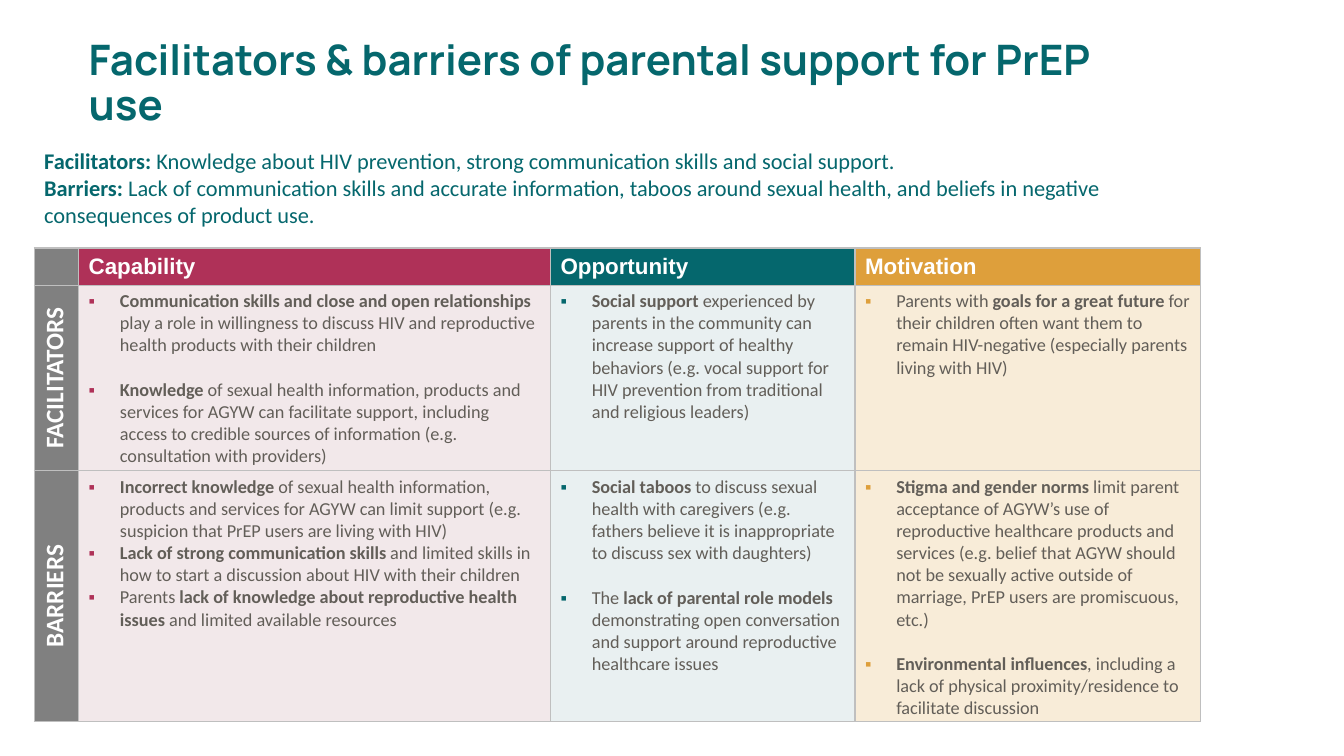
from dataclasses import dataclass

from lxml.etree import SubElement
from pptx import Presentation
from pptx.dml.color import RGBColor
from pptx.enum.text import MSO_ANCHOR as Anchor, MSO_AUTO_SIZE as AutoSize, PP_ALIGN as Align
from pptx.oxml.ns import qn
from pptx.util import Pt

PX = 9144
COLORS = {
    "teal": "05676D", "berry": "AF3158", "gold": "DE9F3B",
    "pale_teal": "E9F0F1", "pale_berry": "F2E8EA", "pale_gold": "F8ECD8",
    "gray": "808080", "border": "BFBFBF", "body": "625E58", "white": "FFFFFF",
}
ROW_LABELS = ["FACILITATORS", "BARRIERS"]
LABEL_WIDTH = 44
ROW_HEIGHTS = [37, 183, 249]
BULLET_INDENT = 31
BULLET_GAP = 15.9


@dataclass
class Items:
    texts: list[str]
    gap: float = BULLET_GAP


@dataclass
class Column:
    heading: str
    width: int
    color: str
    tint: str
    rows: list[Items]


COLUMNS = [
    Column("Capability", 468, "berry", "pale_berry", [
        Items([
            "**Communication skills and close and open relationships **play a role in willingness "
            "to discuss HIV and reproductive health products with their children",
            "**Knowledge **of sexual health information, products and services for AGYW can "
            "facilitate support, including access to credible sources of information "
            "(e.g. consultation with providers)",
        ]),
        Items([
            "**Incorrect knowledge **of sexual health information, products and services for AGYW "
            "can limit support (e.g. suspicion that PrEP users are living with HIV)",
            "**Lack of strong communication skills **and limited skills in how to start a "
            "discussion about HIV with their children",
            "Parents **lack of knowledge about reproductive health issues **and limited "
            "available resources",
        ], gap=0),
    ]),
    Column("Opportunity", 302, "teal", "pale_teal", [
        Items([
            "**Social support **experienced by parents in the community can increase support of "
            "healthy behaviors (e.g. vocal support for HIV prevention from traditional and "
            "religious leaders)",
        ]),
        Items([
            "**Social taboos **to discuss sexual health with caregivers (e.g. fathers believe it "
            "is inappropriate to discuss sex with daughters)",
            "The **lack of parental role models **demonstrating open conversation and support "
            "around reproductive healthcare issues",
        ]),
    ]),
    Column("Motivation", 343, "gold", "pale_gold", [
        Items([
            "Parents with **goals for a great future **for their children often want them to "
            "remain HIV-negative (especially parents living with HIV)",
        ]),
        Items([
            "**Stigma and gender norms **limit parent acceptance of AGYW’s use of reproductive "
            "healthcare products and services (e.g. belief that AGYW should not be sexually "
            "active outside of marriage, PrEP users are promiscuous, etc.)",
            "**Environmental influences**, including a lack of physical proximity/residence to "
            "facilitate discussion",
        ]),
    ]),
]
SUMMARY = [
    "**Facilitators: **Knowledge about HIV prevention, strong communication skills and social support.",
    "**Barriers: **Lack of communication skills and accurate information, taboos around sexual "
    "health, and beliefs in negative consequences of product use.",
]


def rgb(name: str) -> RGBColor:
    return RGBColor.from_string(COLORS[name])


def write(paragraph, text: str, *, size: float, color: str, font: str = "Calibri",
          align: Align = Align.LEFT) -> None:
    paragraph.alignment = align
    for index, part in enumerate(text.split("**")):
        if part:
            run = paragraph.add_run()
            run.text = part
            run.font.name = font
            run.font.size = Pt(size)
            run.font.bold = index % 2 == 1
            run.font.color.rgb = rgb(color)


def paragraphs_for(frame, texts: list[str]):
    for index, text in enumerate(texts):
        yield (frame.add_paragraph() if index else frame.paragraphs[0]), text


def add_bullet(paragraph, color: str) -> None:
    properties = paragraph._p.get_or_add_pPr()
    properties.set("marL", str(BULLET_INDENT * PX))
    properties.set("indent", str(-BULLET_INDENT * PX))
    bullet_color = SubElement(properties, qn("a:buClr"))
    SubElement(bullet_color, qn("a:srgbClr"), val=COLORS[color])
    SubElement(properties, qn("a:buFont"), typeface="Arial")
    SubElement(properties, qn("a:buChar"), char="▪")


def style_cell(cell, fill: str, anchor: Anchor = Anchor.MIDDLE) -> None:
    properties = cell._tc.get_or_add_tcPr()
    for side in ("lnL", "lnR", "lnT", "lnB"):
        line = SubElement(properties, qn(f"a:{side}"), w=str(Pt(1)))
        SubElement(SubElement(line, qn("a:solidFill")), qn("a:srgbClr"), val=COLORS["border"])
    cell.fill.solid()
    cell.fill.fore_color.rgb = rgb(fill)
    cell.vertical_anchor = anchor


def add_title(slide) -> None:
    title = slide.shapes.title
    title.left, title.top, title.width, title.height = 0, 21 * PX, 1150 * PX, 125 * PX
    frame = title.text_frame
    frame.word_wrap = True
    frame.auto_size = AutoSize.NONE
    frame.vertical_anchor = Anchor.MIDDLE
    frame.margin_left = 88 * PX
    paragraph = frame.paragraphs[0]
    paragraph.line_spacing = 0.9
    write(paragraph, "**Facilitators & barriers of parental support for PrEP use**",
          size=30, color="teal", font="Manrope")


def add_summary(slide) -> None:
    box = slide.shapes.add_textbox(34 * PX, 141 * PX, 1194 * PX, 91 * PX)
    box.text_frame.word_wrap = True
    for paragraph, text in paragraphs_for(box.text_frame, SUMMARY):
        write(paragraph, text, size=16, color="teal")


def fill_items(cell, items: Items, column: Column) -> None:
    style_cell(cell, column.tint, Anchor.TOP)
    for index, (paragraph, text) in enumerate(paragraphs_for(cell.text_frame, items.texts)):
        add_bullet(paragraph, column.color)
        if index:
            paragraph.space_before = Pt(items.gap)
        write(paragraph, text, size=13, color="body")


def add_matrix(slide) -> None:
    widths = [LABEL_WIDTH] + [column.width for column in COLUMNS]
    table = slide.shapes.add_table(len(ROW_HEIGHTS), len(widths), 34 * PX, 246 * PX,
                                   sum(widths) * PX, sum(ROW_HEIGHTS) * PX).table
    table.first_row = table.horz_banding = False
    for table_column, width in zip(table.columns, widths):
        table_column.width = width * PX
    for row, height in zip(table.rows, ROW_HEIGHTS):
        row.height = height * PX

    corner = table.cell(0, 0)
    style_cell(corner, "gray")
    corner.margin_top = corner.margin_bottom = 0
    for row_index, label in enumerate(ROW_LABELS, 1):
        cell = table.cell(row_index, 0)
        style_cell(cell, "gray")
        cell._tc.get_or_add_tcPr().set("vert", "vert270")
        write(cell.text_frame.paragraphs[0], f"**{label}**", size=18, color="white",
              align=Align.CENTER)
    for column_index, column in enumerate(COLUMNS, 1):
        heading = table.cell(0, column_index)
        style_cell(heading, column.color)
        write(heading.text_frame.paragraphs[0], f"**{column.heading}**", size=16,
              color="white", font="Arial")
        for row_index, items in enumerate(column.rows, 1):
            fill_items(table.cell(row_index, column_index), items, column)


def main() -> None:
    presentation = Presentation()
    presentation.slide_width = 1333 * PX
    presentation.slide_height = 750 * PX
    slide = presentation.slides.add_slide(presentation.slide_layouts[5])
    add_title(slide)
    add_summary(slide)
    add_matrix(slide)
    presentation.save("out.pptx")


if __name__ == "__main__":
    main()
